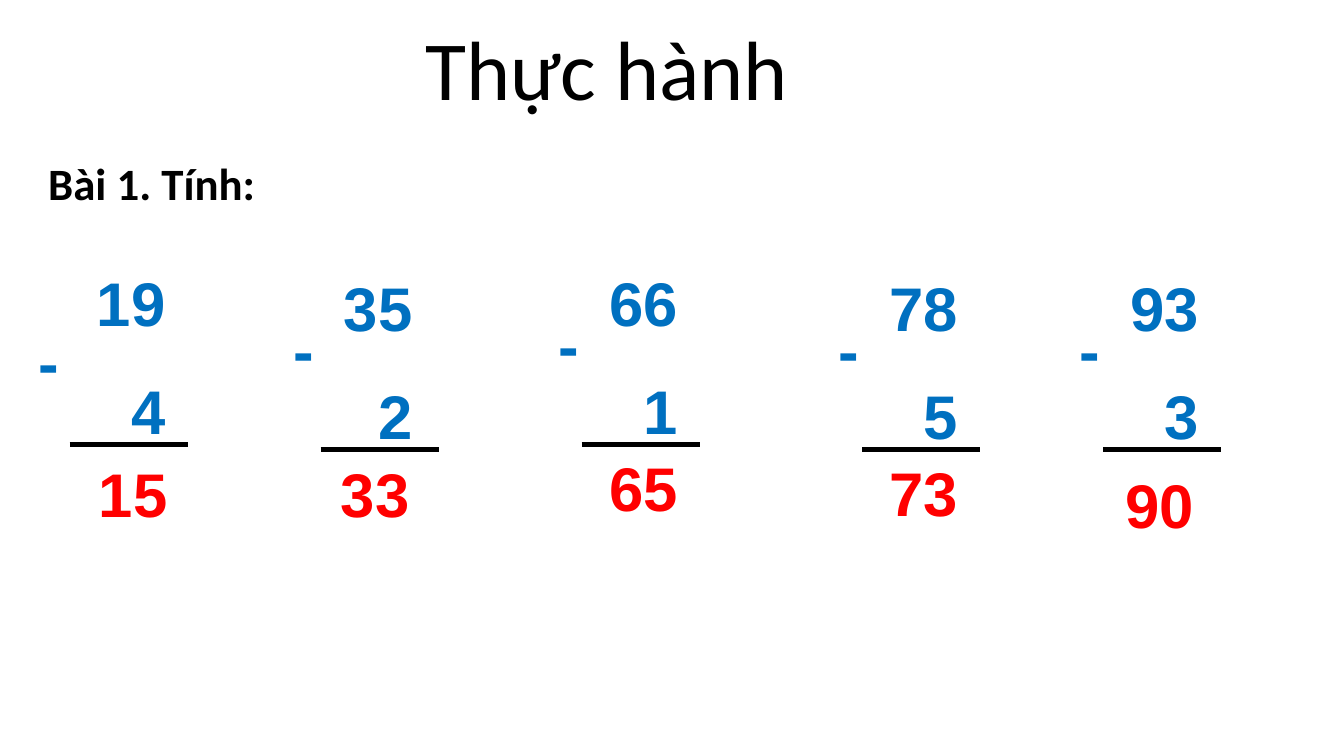
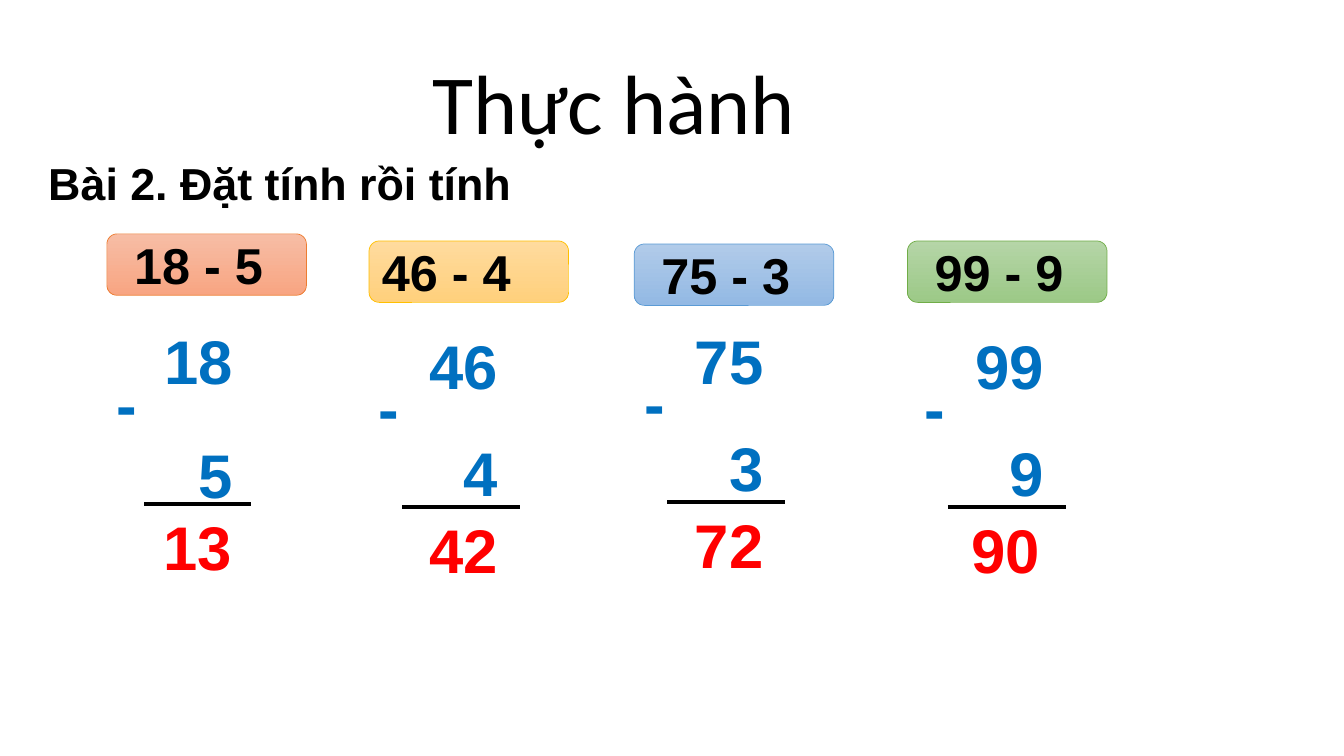
from typing import NamedTuple

from pptx import Presentation
from pptx.dml.color import RGBColor
from pptx.enum.shapes import MSO_CONNECTOR, MSO_SHAPE
from pptx.enum.text import MSO_ANCHOR, MSO_AUTO_SIZE, PP_ALIGN
from pptx.oxml.ns import qn
from pptx.util import Inches, Pt

COLORS = {"text": "000000", "number": "0070C0", "answer": "FF0000"}
TITLE = "Thực hành"
DIGIT_BOX, LINE_H = 0.92, 0.84


class Sum(NamedTuple):
    """A column subtraction; offsets are measured from (x, y)."""
    x: float
    y: float
    top: str
    bottom: str
    result: str
    minus: tuple = (-0.5, 0.42)
    answer: tuple = (0, 1.83)
    rule: tuple = (-0.17, 1.83)
    rule_w: float = 1.17
    gap: int = 24


class Label(NamedTuple):
    """A coloured tag naming an exercise."""
    x: float
    y: float
    text: str
    indent: float
    light: str
    dark: str
    edge: str


# Content
SLIDES = [
    {
        "title_at": (4.12, 0.11),
        "task": "Bài 1. Tính:",
        "task_font": "Calibri",
        "labels": [],
        "sums": [
            Sum(0.86, 2.58, "19", "4", "15", minus=(-0.58, 0.58), answer=(0.02, 1.89)),
            Sum(3.31, 2.63, "35", "2", "33", answer=(-0.03, 1.84), rule=(-0.13, 1.83)),
            Sum(5.94, 2.58, "66", "1", "65"),
            Sum(8.72, 2.63, "78", "5", "73"),
            Sum(11.11, 2.63, "93", "3", "90", answer=(-0.05, 1.95)),
        ],
    },
    {
        "title_at": (4.19, 0.45),
        "task": "Bài 2. Đặt tính rồi tính",
        "task_font": "Arial",
        "labels": [
            Label(1.06, 2.32, "18 - 5", 0.24, "F7BDA5", "F8A582", "ED7D31"),
            Label(3.66, 2.39, "46 - 4", 0.1, "FFDB9E", "FFD07C", "FFC000"),
            Label(6.29, 2.42, "75 - 3", 0.24, "B1CBE9", "93B9E4", "5B9BD5"),
            Label(9, 2.39, "99 - 9", 0.24, "B5D5A7", "9CC987", "70AD47"),
        ],
        "sums": [
            Sum(1.53, 3.15, "18", "5", "13", minus=(-0.47, 0.43), answer=(-0.01, 1.85),
                rule=(-0.1, 1.85), rule_w=1.06, gap=29),
            Sum(4.16, 3.2, "46", "4", "42"),
            Sum(6.79, 3.15, "75", "3", "72"),
            Sum(9.57, 3.2, "99", "9", "90", answer=(-0.04, 1.83)),
        ],
    },
]


def rgb(value):
    return RGBColor.from_string(value)


def style(p, size, color, font="Arial", bold=True):
    p.font.size, p.font.name, p.font.bold = Pt(size), font, bold
    p.font.color.rgb = rgb(color)


def add_text(s, x, y, w, h, lines, size, color, font="Arial", bold=True,
             align=PP_ALIGN.LEFT, gap=0):
    tf = s.shapes.add_textbox(Inches(x), Inches(y), Inches(w), Inches(h)).text_frame
    tf.word_wrap = True
    tf.auto_size = MSO_AUTO_SIZE.SHAPE_TO_FIT_TEXT
    for i, line in enumerate(lines):
        p = tf.add_paragraph() if i else tf.paragraphs[0]
        p.text, p.alignment = line, align
        p.space_before = Pt(gap if i else 0)
        style(p, size, color, font, bold)


def add_rule(s, x, y, w):
    line = s.shapes.add_connector(MSO_CONNECTOR.STRAIGHT, Inches(x), Inches(y),
                                  Inches(x + w), Inches(y))
    line.line.color.rgb = rgb(COLORS["text"])
    line.line.width = Pt(3)
    sp_pr = line._element.spPr
    sp_pr.append(sp_pr.makeelement(qn("a:effectLst"), {}))


def add_digits(s, x, y, lines, color, gap=0):
    # Units digits share the right edge of the column
    height = LINE_H if len(lines) == 1 else 1.95
    add_text(s, x - 0.04, y, DIGIT_BOX, height, lines, 44, color,
             align=PP_ALIGN.RIGHT, gap=gap)


def add_sum(s, item):
    def place(offset):
        return item.x + offset[0], item.y + offset[1]

    add_digits(s, item.x, item.y, [item.top, item.bottom], COLORS["number"], item.gap)
    add_text(s, *place(item.minus), 0.58, LINE_H, ["-"], 44, COLORS["number"])
    add_rule(s, *place(item.rule), item.rule_w)
    add_digits(s, *place(item.answer), [item.result], COLORS["answer"])


def add_label(s, label):
    sp = s.shapes.add_shape(MSO_SHAPE.ROUNDED_RECTANGLE, Inches(label.x),
                            Inches(label.y), Inches(1.98), Inches(0.61))
    sp.shadow.inherit = False
    sp.fill.gradient()
    sp.fill.gradient_angle = 270
    for stop, color in zip(sp.fill.gradient_stops, (label.light, label.dark)):
        stop.color.rgb = rgb(color)
    sp.line.color.rgb = rgb(label.edge)
    sp.line.width = Pt(0.5)
    tf = sp.text_frame
    tf.margin_left = Inches(label.indent)
    tf.vertical_anchor = MSO_ANCHOR.MIDDLE
    p = tf.paragraphs[0]
    p.text, p.alignment = label.text, PP_ALIGN.LEFT
    style(p, 36, COLORS["text"])


def main():
    prs = Presentation()
    prs.slide_width, prs.slide_height = Inches(13.33), Inches(7.5)
    for content in SLIDES:
        s = prs.slides.add_slide(prs.slide_layouts[6])
        add_text(s, *content["title_at"], 6.3, 1.11, [TITLE], 60, COLORS["text"],
                 "Calibri", bold=False)
        add_text(s, 0.38, 1.5, 7.82, 0.64, [content["task"]], 32, COLORS["text"],
                 content["task_font"])
        for label in content["labels"]:
            add_label(s, label)
        for item in content["sums"]:
            add_sum(s, item)
    prs.save("out.pptx")


if __name__ == "__main__":
    main()
